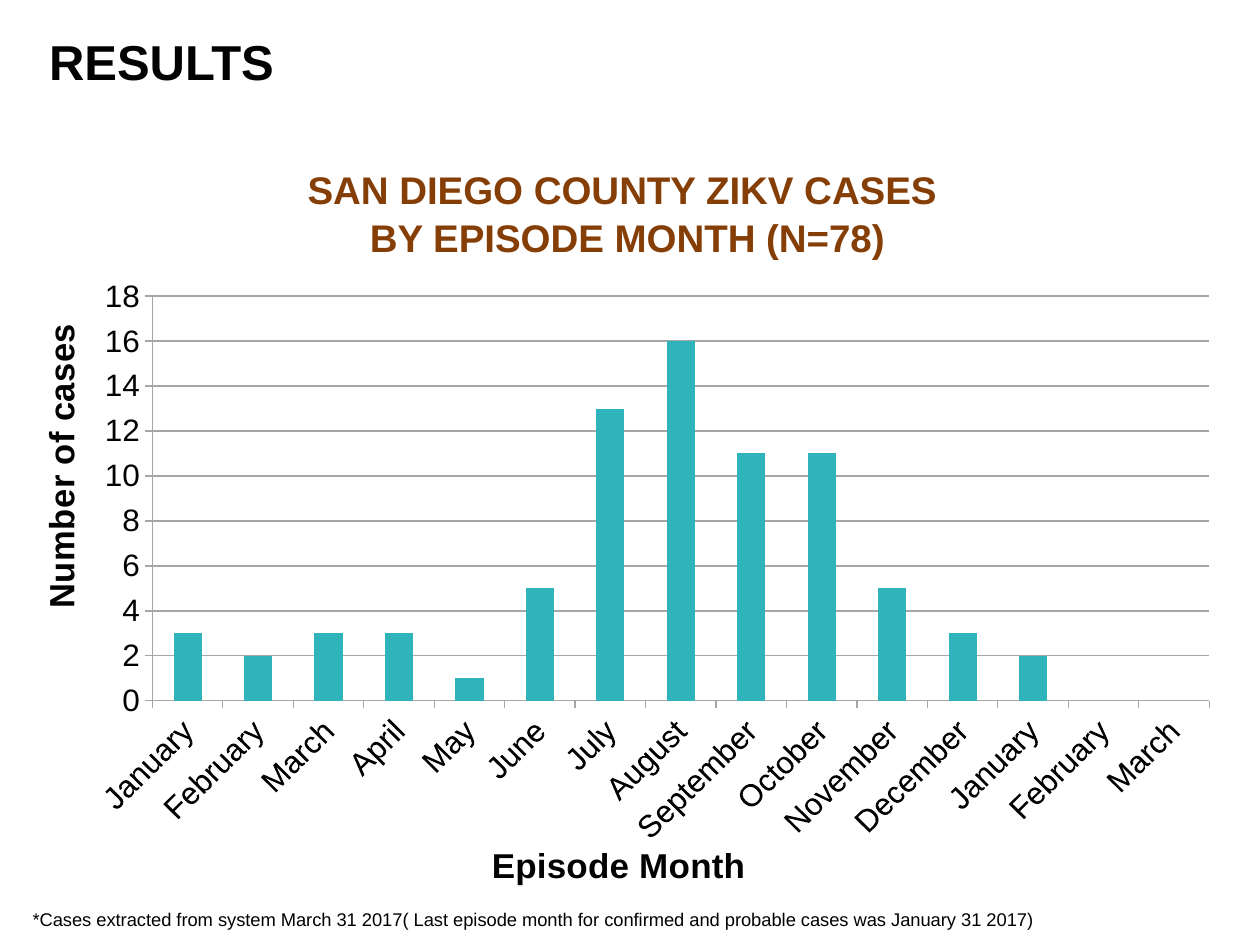
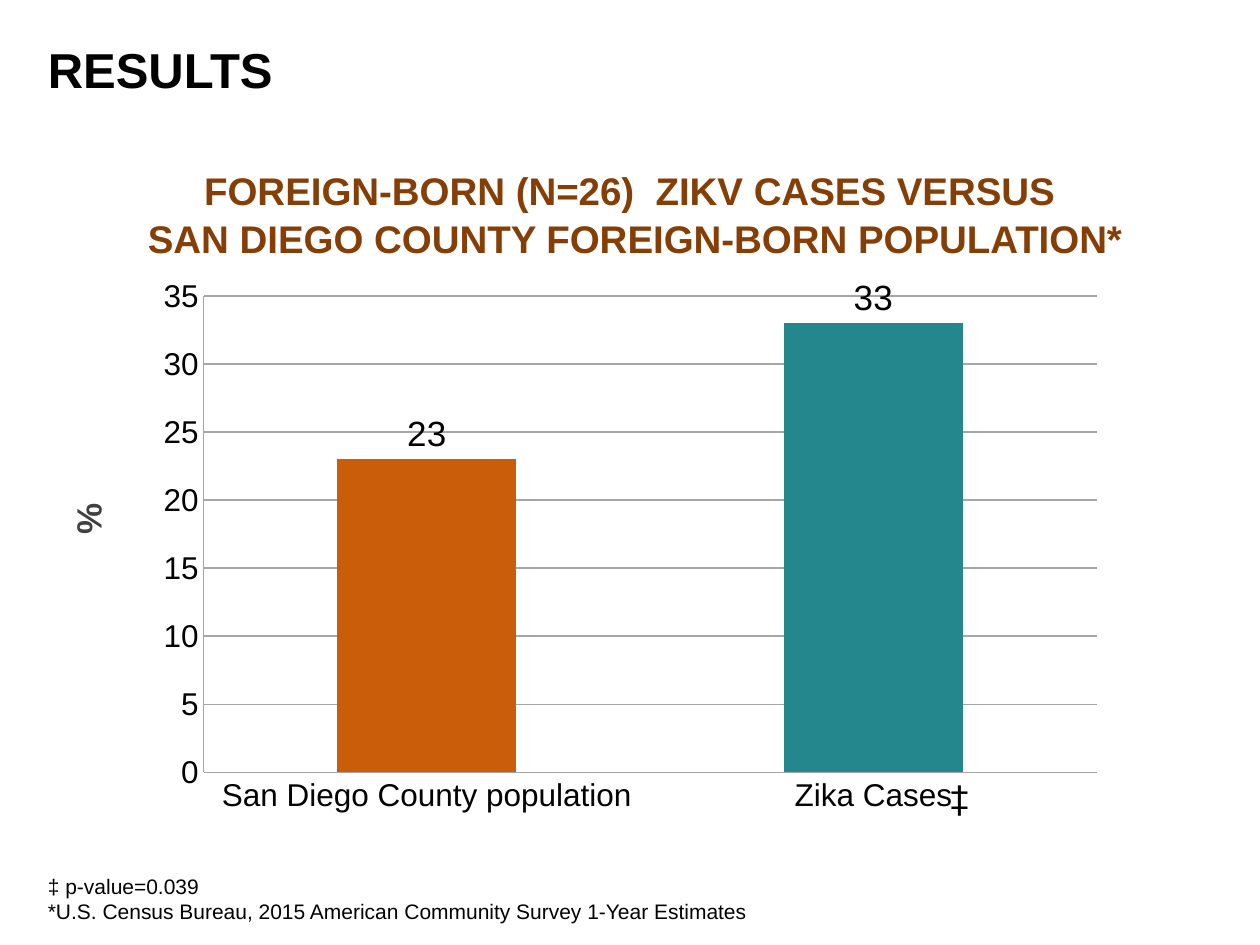
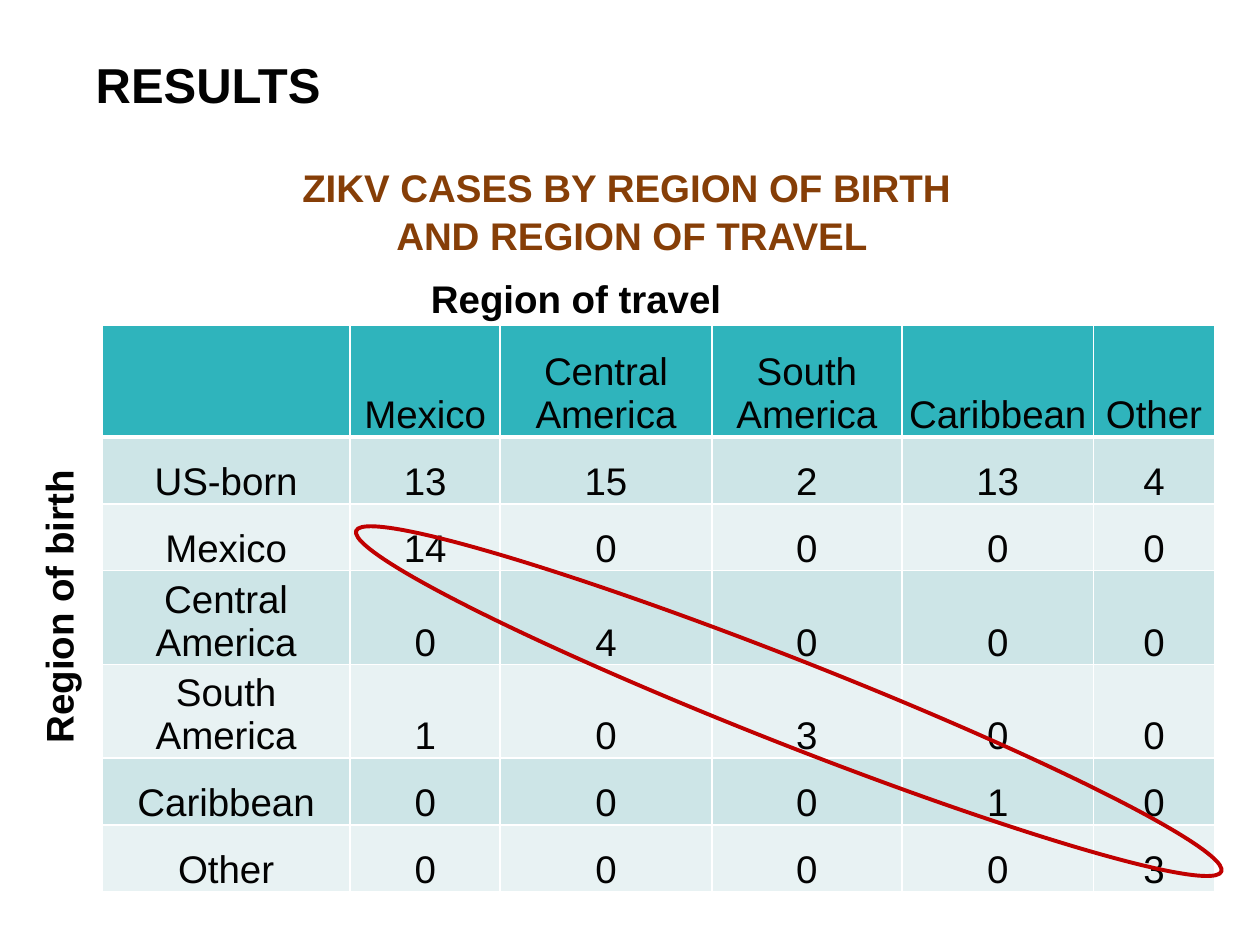
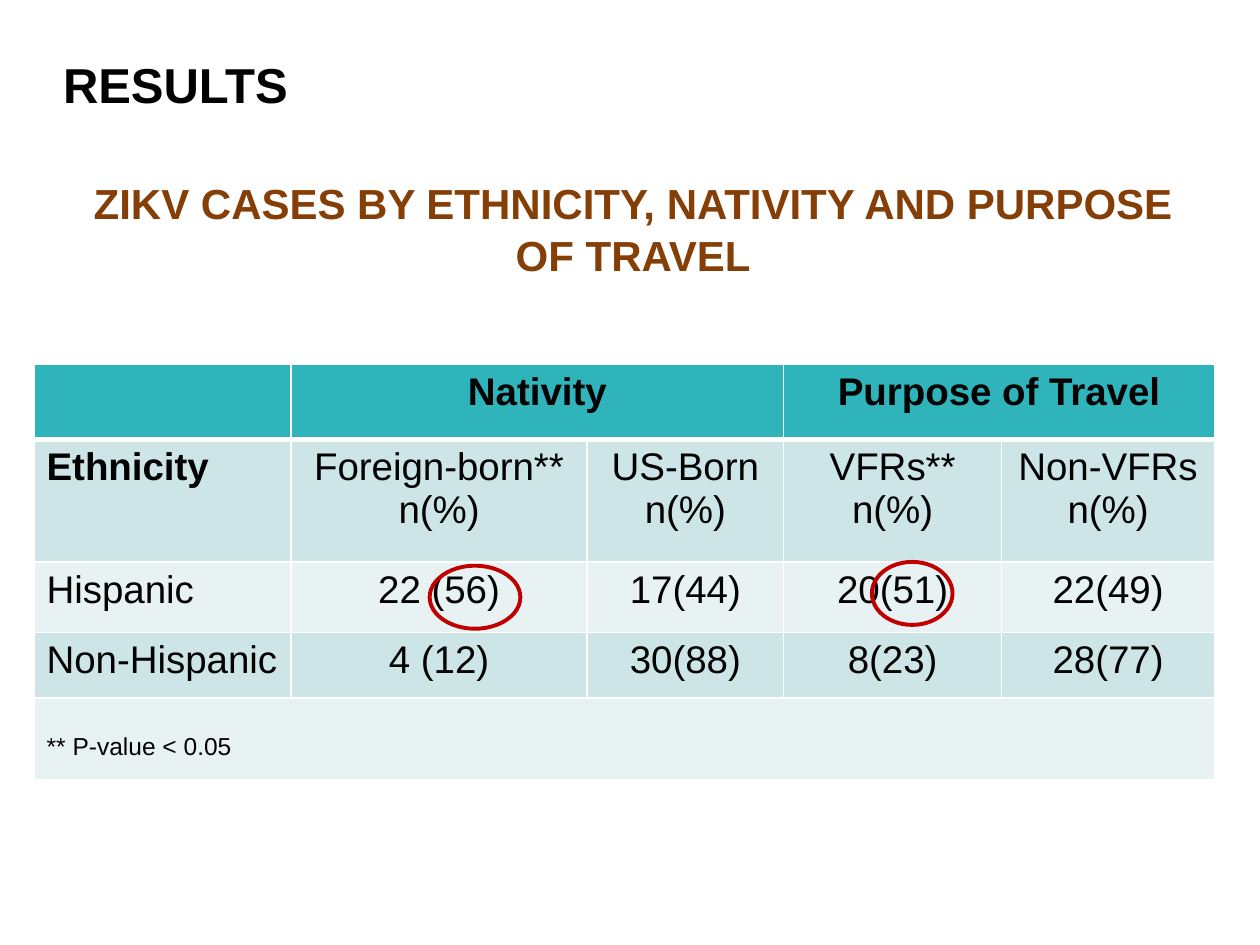
"""Builds four results slides on Zika virus cases in San Diego County."""
from lxml import etree
from pptx import Presentation
from pptx import util as u
from pptx.chart.data import CategoryChartData
from pptx.dml.color import RGBColor
from pptx.enum import chart as ch, shapes, text
from pptx.oxml import ns, parse_xml

FONT, INK, GREY, BROWN = "Arial", "020202", "404040", "863E07"
TEAL, RED, GRID = "2FB4BC", "C00000", "A6A6A6"
BANDS = ("CDE5E7", "E8F2F3")
CENTER = text.PP_ALIGN.CENTER

HEADINGS = [
    dict(title=(0.39, 0.2, 5.83, 0.81), lift=0.18, box=(0.61, 1.3, 8.74, 0.64), size=22,
         words="SAN DIEGO COUNTY ZIKV CASES \nBY EPISODE MONTH (N=78)"),
    dict(title=(0.38, 0.2, 5.83, 0.81), lift=0.06, box=(0.21, 1.31, 9.66, 0.64), size=22,
         words="FOREIGN-BORN (N=26)\u00a0 ZIKV CASES VERSUS \nSAN DIEGO COUNTY FOREIGN-BORN POPULATION*"),
    dict(title=(0.76, 0.29, 5.83, 0.81), lift=0, box=(0.2, 1.29, 9.63, 0.64), size=22,
         words="ZIKV CASES BY REGION OF BIRTH \nAND REGION OF TRAVEL"),
    dict(title=(0.5, 0.29, 6.08, 0.81), lift=0, box=(0.27, 1.39, 9.51, 0.84), size=24,
         words="ZIKV CASES BY ETHNICITY, NATIVITY AND PURPOSE\vOF TRAVEL"),
]
MONTHS = ["January", "February", "March", "April", "May", "June", "July", "August",
          "September", "October", "November", "December", "January", "February", "March"]
MONTH_CASES = [3, 2, 3, 3, 1, 5, 13, 16, 11, 11, 5, 3, 2, None, None]
BIRTH_GROUPS = ["San Diego County population", "Zika Cases"]
BIRTH_SHARES = [23, 33]
BIRTH_COLORS = ["C95D0A", "23878D"]

REGIONS = [
    ["", "Mexico", "Central America", "South America", "Caribbean", "Other"],
    ["US-born", "13", "15", "2", "13", "4"],
    ["Mexico", "14", "0", "0", "0", "0"],
    ["Central America", "0", "4", "0", "0", "0"],
    ["South America", "1", "0", "3", "0", "0"],
    ["Caribbean", "0", "0", "0", "1", "0"],
    ["Other", "0", "0", "0", "0", "3"],
]
ETHNICITY = [
    ["", "Nativity", "", "Purpose of Travel", ""],
    ["Ethnicity", "Foreign-born**\nn(%)", "US-Born\nn(%)", "VFRs**\nn(%)", "Non-VFRs\nn(%)"],
    ["Hispanic", "22 (56)", "17(44)", "20(51)", "22(49)"],
    ["Non-Hispanic", "4 (12)", "30(88)", "8(23)", "28(77)"],
    ["** P-value < 0.05", "", "", "", ""],
]


def rgb(hex_color):
    return RGBColor.from_string(hex_color)


def inches(box):
    return [u.Inches(v) for v in box]


def style(font, size, color=INK, bold=False, name=FONT):
    font.name, font.size, font.bold = name, u.Pt(size), bold
    font.color.rgb = rgb(color)


def format_text(tf, size, color=INK, bold=False, align=None, spacing=None, name=FONT):
    for p in tf.paragraphs:
        p.alignment = align
        p.line_spacing = spacing
        for r in p.runs:
            style(r.font, size, color, bold, name)


def add_text(s, box, words, size, inset=0, wrap=True, **look):
    tf = s.shapes.add_textbox(*inches(box)).text_frame
    tf.word_wrap = wrap
    tf.margin_left = tf.margin_right = u.Inches(inset)
    tf.margin_top = tf.margin_bottom = u.Inches(inset / 2)
    tf.text = words
    format_text(tf, size, **look)
    return tf


def add_slide(prs, heading):
    s = prs.slides.add_slide(prs.slide_layouts[6])
    tf = add_text(s, heading["title"], "RESULTS", 28, bold=True, spacing=0.9)
    tf.vertical_anchor = text.MSO_ANCHOR.MIDDLE
    tf.margin_bottom = u.Inches(heading["lift"])
    add_text(s, heading["box"], heading["words"], heading["size"], color=BROWN,
             bold=True, align=CENTER, spacing=1.04)
    return s


def place(parent, x, y, w=None, h=None):
    """Give a plot area or an axis title a fixed place in its chart."""
    values = [("xMode", "edge"), ("yMode", "edge"), ("x", x), ("y", y)]
    if w:
        values = [("layoutTarget", "inner")] + values + [("w", w), ("h", h)]
    for old in parent.findall(ns.qn("c:layout")):
        parent.remove(old)
    inner = "".join(f'<c:{k} val="{v}"/>' for k, v in values)
    layout = parse_xml(f'<c:layout {ns.nsdecls("c")}><c:manualLayout>{inner}'
                       '</c:manualLayout></c:layout>')
    tx = parent.find(ns.qn("c:tx"))
    if tx is None:
        parent.insert(0, layout)
    else:
        tx.addnext(layout)


def add_axis_title(axis, words, at, color=INK):
    tf = axis.axis_title.text_frame
    tf.text = words
    format_text(tf, 20, color, True)
    place(axis.axis_title._element, *at)


def add_columns(s, kind, box, cats, vals, plot_at, top, step, tick):
    data = CategoryChartData()
    data.categories = cats
    data.add_series("Series 1", vals)
    chart = s.shapes.add_chart(kind, *inches(box), data).chart
    chart.has_legend = chart.has_title = False
    style(chart.font, 18)
    place(chart._chartSpace.chart.plotArea, *plot_at)
    plot = chart.plots[0]
    plot.gap_width, plot.vary_by_categories = 150, False
    fill = plot.series[0].format.fill
    fill.solid()
    fill.fore_color.rgb = rgb(TEAL)
    value_axis = chart.value_axis
    value_axis.minimum_scale, value_axis.maximum_scale = 0, top
    value_axis.major_unit = step
    value_axis.has_major_gridlines = True
    for axis in (chart.category_axis, value_axis):
        axis.major_tick_mark = tick
        style(axis.tick_labels.font, 18)
        axis.format.line.color.rgb = rgb(GRID)
    value_axis.major_gridlines.format.line.color.rgb = rgb(GRID)
    return chart


def format_cell(cell, row):
    """Set the white borders and the band colour of one cell."""
    tcPr = cell._tc.get_or_add_tcPr()
    for side in ("L", "R", "T", "B"):
        width = 3 if (row, side) in ((0, "B"), (1, "T")) else 1
        ln = etree.SubElement(tcPr, ns.qn(f"a:ln{side}"), w=str(u.Pt(width)))
        solid = etree.SubElement(ln, ns.qn("a:solidFill"))
        etree.SubElement(solid, ns.qn("a:srgbClr"), val="FFFFFF")
    cell.fill.solid()
    cell.fill.fore_color.rgb = rgb(BANDS[(row - 1) % 2] if row else TEAL)


def add_grid(s, left, top, cols, heights, rows):
    box = inches((left, top, sum(cols), sum(heights)))
    table = s.shapes.add_table(len(rows), len(cols), *box).table
    table.first_row = table.horz_banding = False
    for col, width in zip(table.columns, cols):
        col.width = u.Inches(width)
    for i, (row, height) in enumerate(zip(rows, heights)):
        table.rows[i].height = u.Inches(height)
        for j, words in enumerate(row):
            cell = table.cell(i, j)
            format_cell(cell, i)
            if words:
                cell.text_frame.text = words
                format_text(cell.text_frame, 22, align=CENTER)
    return table


def add_ring(s, box, rotation=0):
    sp = s.shapes.add_shape(shapes.MSO_SHAPE.OVAL, *inches(box))
    sp.shadow.inherit = False
    sp.rotation = rotation
    sp.fill.background()
    sp.line.color.rgb = rgb(RED)
    sp.line.width = u.Pt(2.25)


def month_slide(s):
    chart = add_columns(s, ch.XL_CHART_TYPE.COLUMN_STACKED, (0.16, 2.05, 9.72, 5.07), MONTHS,
                        MONTH_CASES, (0.108, 0.06, 0.863, 0.643), 18, 2, ch.XL_TICK_MARK.OUTSIDE)
    chart.plots[0].overlap = 100
    labels = chart.category_axis._element.find(ns.qn("c:txPr"))
    labels.find(ns.qn("a:bodyPr")).set("rot", str(-45 * 60000))
    add_axis_title(chart.category_axis, "Episode Month", (0.38, 0.92))
    add_axis_title(chart.value_axis, "Number of cases", (0.01, 0.1))
    add_text(s, (0.16, 7.16, 9.59, 0.28), "*Cases extracted from system March 31 2017( Last episode "
             "month for confirmed and probable cases was January 31 2017)", 10.5, inset=0.1,
             color="000000")


def birth_slide(s):
    chart = add_columns(s, ch.XL_CHART_TYPE.COLUMN_CLUSTERED, (0.38, 2.19, 9.29, 5.15),
                        BIRTH_GROUPS, BIRTH_SHARES, (0.133, 0.031, 0.763, 0.734), 35, 5,
                        ch.XL_TICK_MARK.NONE)
    add_axis_title(chart.value_axis, "%", (0.01, 0.34), GREY)
    plot = chart.plots[0]
    for i, color in enumerate(BIRTH_COLORS):
        fill = plot.series[0].points[i].format.fill
        fill.solid()
        fill.fore_color.rgb = rgb(color)
    plot.has_data_labels = True
    labels = plot.data_labels
    labels.show_value = True
    labels.number_format, labels.number_format_is_linked = "0", False
    labels.position = ch.XL_LABEL_POSITION.OUTSIDE_END
    style(labels.font, 20)
    add_text(s, (0.38, 6.93, 7.89, 0.4), "‡ p-value=0.039\n*U.S. Census Bureau, 2015 American "
             "Community Survey 1-Year Estimates", 12)
    add_text(s, (7.54, 6.16, 0.15, 0.32), "‡", 19, wrap=False, name="Roboto")


def region_slide(s):
    table = add_grid(s, 0.81, 2.58, [1.97, 1.19, 1.68, 1.51, 1.52, 0.96],
                     [0.89, 0.53, 0.53, 0.69, 0.69, 0.53, 0.53], REGIONS)
    for cell in table.iter_cells():
        cell.vertical_anchor = text.MSO_ANCHOR.BOTTOM
        cell.margin_left = cell.margin_right = cell.margin_top = u.Inches(0.01)
        cell.margin_bottom = 0
    tf = add_text(s, (0.28, 3.49, 0.37, 2.41), "Region of birth", 22, bold=True)
    tf._txBody.bodyPr.set("vert", "vert270")
    add_text(s, (3.42, 2.18, 3.01, 0.37), "Region of travel", 22, bold=True)
    add_ring(s, (2.57, 5.23, 7.38, 0.67), 21.5)


def ethnicity_slide(s):
    table = add_grid(s, 0.27, 2.89, [2.04, 2.35, 1.56, 1.73, 1.69],
                     [0.6, 0.97, 0.56, 0.52, 0.65], ETHNICITY)
    for row, first, last in ((0, 1, 2), (0, 3, 4), (4, 0, 4)):
        table.cell(row, first).merge(table.cell(row, last))
    for row, col in ((0, 1), (0, 3), (1, 0)):
        format_text(table.cell(row, col).text_frame, 22, bold=True, align=CENTER if col else None)
    for row in (2, 3):
        format_text(table.cell(row, 0).text_frame, 22)
    note = table.cell(4, 0)
    note.margin_top = u.Inches(0.28)
    format_text(note.text_frame, 14)
    for box in ((3.41, 4.49, 0.72, 0.5), (6.92, 4.46, 0.64, 0.5)):
        add_ring(s, box)


def main():
    prs = Presentation()
    prs.slide_width, prs.slide_height = u.Inches(10), u.Inches(7.5)
    builders = (month_slide, birth_slide, region_slide, ethnicity_slide)
    for heading, build in zip(HEADINGS, builders):
        build(add_slide(prs, heading))
    prs.save("out.pptx")


if __name__ == "__main__":
    main()
